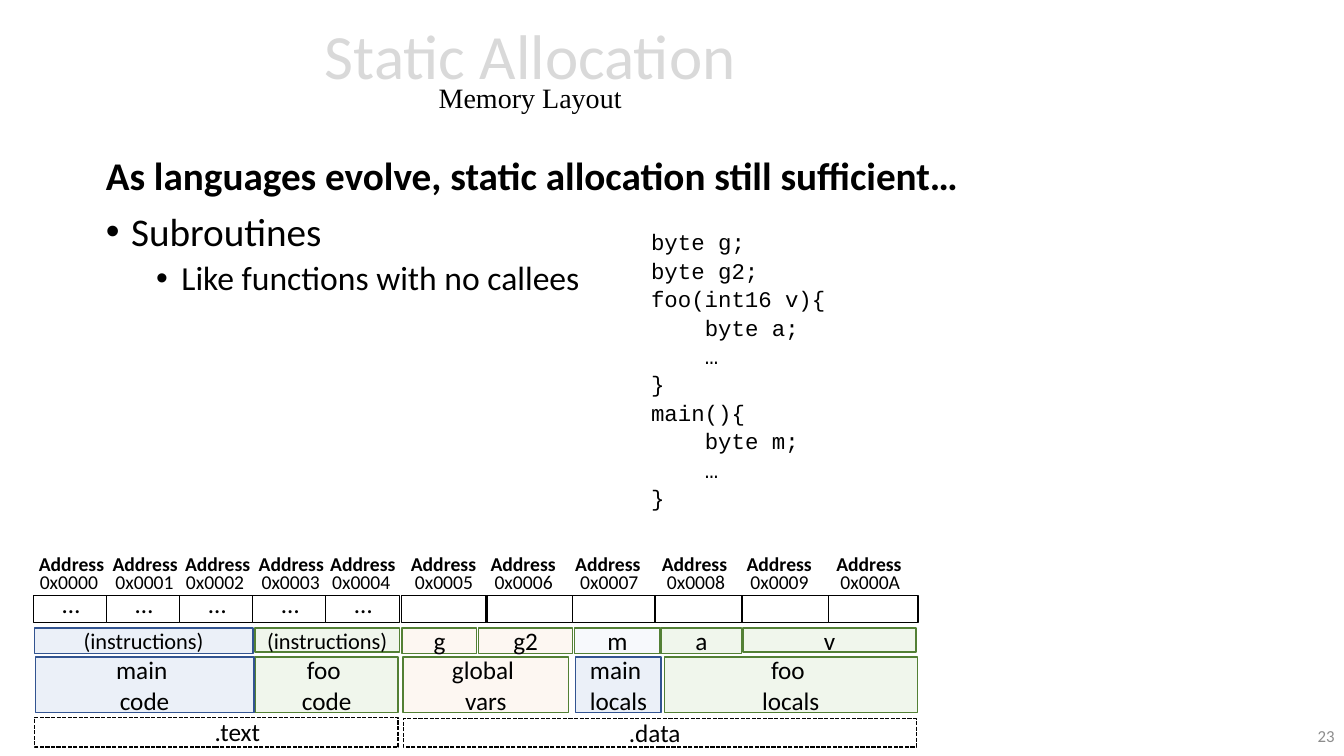
from dataclasses import dataclass

from lxml import etree
from pptx import Presentation
from pptx.dml.color import RGBColor
from pptx.enum.dml import MSO_LINE
from pptx.enum.shapes import MSO_SHAPE
from pptx.enum.text import MSO_ANCHOR, MSO_AUTO_SIZE, PP_ALIGN
from pptx.oxml.ns import qn
from pptx.shapes.autoshape import Shape
from pptx.slide import Slide
from pptx.text.text import _Paragraph as Paragraph
from pptx.util import Pt

RECTANGLE = MSO_SHAPE.RECTANGLE
DASHED = MSO_LINE.SQUARE_DOT
LEFT, CENTER, RIGHT = PP_ALIGN.LEFT, PP_ALIGN.CENTER, PP_ALIGN.RIGHT
TOP, MIDDLE = MSO_ANCHOR.TOP, MSO_ANCHOR.MIDDLE
NO_FIT, GROW = MSO_AUTO_SIZE.NONE, MSO_AUTO_SIZE.SHAPE_TO_FIT_TEXT

BLACK = RGBColor(0x00, 0x00, 0x00)
WHITE = RGBColor(0xFF, 0xFF, 0xFF)
PALE_GRAY = RGBColor(0xD9, 0xD9, 0xD9)
NUMBER_GRAY = RGBColor(0x8C, 0x8C, 0x8C)
BLUE = RGBColor(0x44, 0x72, 0xC4)
LIGHT_BLUE = RGBColor(0xB4, 0xC7, 0xE7)
GREEN = RGBColor(0x70, 0xAD, 0x47)
ORANGE = RGBColor(0xF4, 0xB1, 0x83)
DARK_BLUE = RGBColor(0x32, 0x54, 0x91)
DARK_GREEN = RGBColor(0x53, 0x80, 0x35)

SANS, SERIF, MONO = "Calibri", "Times New Roman", "Courier New"
CODE_INDENT = 38.4


@dataclass(frozen=True)
class Area:
    left: float
    top: float
    width: float
    height: float


@dataclass(frozen=True)
class Block:
    text: str
    area: Area
    fill: RGBColor
    line: RGBColor = DARK_GREEN
    size: float = 18


@dataclass(frozen=True)
class Item:
    text: str
    size: float
    level: int = 0
    margin: float = 0
    before: float = 10
    bullet: bool = True


@dataclass(frozen=True)
class Address:
    label_left: float
    value_left: float


ITEMS = [
    Item("As languages evolve, static allocation still sufficient…", 28, bullet=False),
    Item("Subroutines", 28, margin=18),
    Item("Like functions with no callees", 24, level=1, margin=54, before=5),
]

CODE = [
    ("byte g;", 0), ("byte g2;", 0), ("foo(int16 v){", 0), ("byte a;\v…", 1), ("}", 0),
    ("main(){", 0), ("byte m;", 1), ("…", 1), ("}", 0),
]

ADDRESSES = [
    Address(23, 26.6), Address(75.6, 80.6), Address(127.4, 131), Address(180, 185),
    Address(231.1, 235.4), Address(288.7, 294.5), Address(345.6, 351.4),
    Address(406.1, 412.6), Address(468, 474.5), Address(528.5, 534.2), Address(592.6, 599),
]

TEXT_CELLS = [(23.8 + 52.2 * index, 52.6) for index in range(5)]
DATA_CELLS = [(286.6, 60.5)] + [(406.1 + 61.9 * index, 67) for index in range(3)]
DATA_CELLS += [(591.8, 64.1), (347.8, 61.2)]

BLOCKS = [
    Block("foo \ncode", Area(182.2, 469.4, 102.2, 39.6), GREEN),
    Block("main \ncode", Area(25.2, 469.4, 156.2, 39.6), BLUE, DARK_BLUE),
    Block("global \nvars", Area(288, 469.4, 118.1, 39.6), ORANGE),
    Block("g", Area(287.3, 448.6, 53.3, 18), ORANGE),
    Block("g2", Area(342, 448.6, 67, 18), ORANGE),
    Block("main \nlocals", Area(411.1, 469.4, 61.2, 39.6), BLUE, DARK_BLUE),
    Block("m", Area(410.4, 448.6, 61.2, 18), LIGHT_BLUE),
    Block("foo \nlocals", Area(474.5, 469.4, 180.7, 39.6), GREEN),
    Block("a", Area(472.3, 448.6, 57.6, 18), GREEN),
    Block("v", Area(530.6, 448.6, 123.8, 17.3), GREEN),
    Block("(instructions)", Area(24.5, 448.6, 156.2, 18), BLUE, DARK_BLUE, 16),
    Block("(instructions)", Area(182.2, 448.6, 103, 17.3), GREEN, size=16),
]

SECTIONS = [
    (".text", Area(24.5, 512.6, 259.9, 20.9), Area(146.2, 508.3, 48.2, 28.8)),
    (".data", Area(288, 513.4, 366.5, 20.2), Area(442.1, 509, 51.8, 28.8)),
]


def place(shape: Shape, area: Area) -> None:
    shape.left, shape.top = Pt(area.left), Pt(area.top)
    shape.width, shape.height = Pt(area.width), Pt(area.height)


def style(para: Paragraph, size: float, font: str = SANS, color: RGBColor = BLACK,
          bold: bool = False, align: PP_ALIGN = LEFT) -> None:
    para.alignment = align
    for span in para.runs:
        span.font.size, span.font.name = Pt(size), font
        span.font.color.rgb, span.font.bold = color, bold


def indent(para: Paragraph, margin: float, hanging: float = 0) -> None:
    properties = para._p.get_or_add_pPr()
    properties.set("marL", str(Pt(margin)))
    properties.set("indent", str(-Pt(hanging)))


def add_label(page: Slide, text: str, area: Area, size: float, bold: bool = False,
              align: PP_ALIGN = LEFT, wrap: bool = True, inset: float = 0) -> Shape:
    box = page.shapes.add_textbox(0, 0, 0, 0)
    frame = box.text_frame
    frame.text = text
    frame.word_wrap, frame.auto_size = wrap, GROW
    frame.margin_left = frame.margin_right = Pt(inset)
    for para in frame.paragraphs:
        style(para, size, bold=bold, align=align)
    place(box, area)
    return box


def add_box(page: Slide, area: Area, line: RGBColor = BLACK) -> Shape:
    box = page.shapes.add_shape(RECTANGLE, 0, 0, 0, 0)
    place(box, area)
    box.shadow.inherit = False
    box.fill.background()
    box.line.color.rgb, box.line.width = line, Pt(1)
    return box


def add_block(page: Slide, block: Block) -> None:
    box = add_box(page, block.area, block.line)
    box.fill.solid()
    box.fill.fore_color.rgb = block.fill
    color = box._element.spPr.find(qn("a:solidFill"))[0]
    etree.SubElement(color, qn("a:alpha")).set("val", "10000")
    frame = box.text_frame
    frame.text, frame.vertical_anchor = block.text, MIDDLE
    for para in frame.paragraphs:
        style(para, block.size, align=CENTER)


def fill_title(page: Slide) -> None:
    title = page.shapes.title
    place(title, Area(18.7, 1.4, 720, 104.4))
    frame = title.text_frame
    frame.text = "Static Allocation\vMemory Layout"
    frame.vertical_anchor, frame.auto_size = MIDDLE, NO_FIT
    para = frame.paragraphs[0]
    para.line_spacing = 0.7
    style(para, 45, color=PALE_GRAY, align=CENTER)
    subtitle = para.runs[1].font
    subtitle.size, subtitle.name, subtitle.color.rgb = Pt(20), SERIF, BLACK


def fill_body(page: Slide) -> None:
    body = page.placeholders[1]
    place(body, Area(68.4, 108, 670.3, 342.7))
    frame = body.text_frame
    frame.text = "\n".join(item.text for item in ITEMS)
    frame.vertical_anchor, frame.auto_size = TOP, NO_FIT
    for para, item in zip(frame.paragraphs, ITEMS):
        para.level, para.line_spacing, para.space_before = item.level, 0.9, Pt(item.before)
        style(para, item.size, bold=not item.bullet)
        indent(para, item.margin, 18 if item.bullet else 0)
        properties = para._p.get_or_add_pPr()
        if item.bullet:
            etree.SubElement(properties, qn("a:buFont")).set("typeface", "Arial")
            etree.SubElement(properties, qn("a:buChar")).set("char", "•")
        else:
            etree.SubElement(properties, qn("a:buNone"))


def add_code(page: Slide) -> None:
    text = "\n".join(line for line, _ in CODE)
    box = add_label(page, text, Area(465.1, 158.4, 227.5, 200.9), 16)
    for para, (_, depth) in zip(box.text_frame.paragraphs, CODE):
        style(para, 16, MONO)
        para.line_spacing = 1.06
        indent(para, depth * CODE_INDENT)


def add_memory(page: Slide) -> None:
    for left, width in DATA_CELLS + TEXT_CELLS:
        cell = add_box(page, Area(left, 425.5, width, 19.4))
        cell.fill.solid()
        cell.fill.fore_color.rgb = WHITE
    for left, _ in TEXT_CELLS:
        add_label(page, "…", Area(left + 13.7, 416.9, 27.4, 28.8), 18, wrap=False, inset=7.2)
    for index, address in enumerate(ADDRESSES):
        add_label(page, "Address", Area(address.label_left, 391, 56.2, 24.5), 14, True, CENTER)
        value_area = Area(address.value_left, 403.5, 45.4, 25)
        add_label(page, f"0x{index:04X}", value_area, 14, align=CENTER)
    for name, outline, label in SECTIONS:
        add_box(page, outline).line.dash_style = DASHED
        add_label(page, name, label, 18, wrap=False, inset=7.2)
    for block in BLOCKS:
        add_block(page, block)


def main() -> None:
    deck = Presentation()
    deck.slide_width, deck.slide_height = Pt(960), Pt(540)
    page = deck.slides.add_slide(deck.slide_layouts[1])
    fill_title(page)
    fill_body(page)
    number = add_label(page, "23", Area(744.5, 511.2, 216, 28.8), 12, align=RIGHT, inset=7.2)
    number.text_frame.auto_size, number.text_frame.vertical_anchor = NO_FIT, MIDDLE
    number.text_frame.paragraphs[0].runs[0].font.color.rgb = NUMBER_GRAY
    add_code(page)
    add_memory(page)
    deck.save("out.pptx")


if __name__ == "__main__":
    main()
